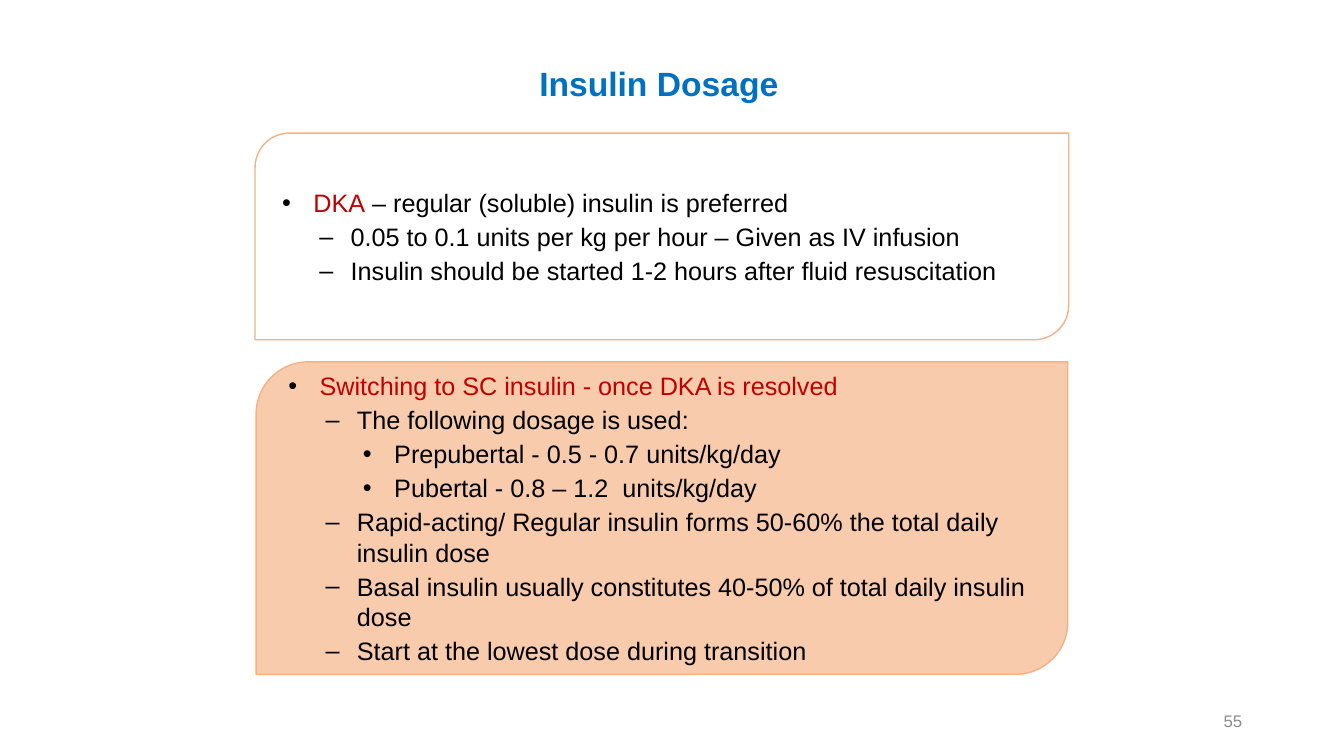
import pptx
import pptx.dml.color
import pptx.enum.shapes
import pptx.enum.text
import pptx.oxml.ns
import pptx.util
from lxml import etree

SCALE = 9144  # EMU per px, 100 px to the inch
FONT = "Arial"
BLACK, RED, BLUE, GREY = "000000", "C00000", "0070C0", "8C8C8C"
WHITE, PEACH, ORANGE = "FFFFFF", "F8CBAD", "F4B183"
ALIGN = pptx.enum.text.PP_ALIGN

# Each item: level, red text, black text
DKA = [
    (0, "DKA", " – regular (soluble) insulin is preferred"),
    (1, "", "0.05 to 0.1 units per kg per hour – Given as IV infusion"),
    (1, "", "Insulin should be started 1-2 hours after fluid resuscitation"),
]
SWITCH = [
    (0, "Switching to SC insulin - once DKA is resolved", ""),
    (1, "", "The following dosage is used:"),
    (2, "", "Prepubertal - 0.5 - 0.7 units/kg/day"),
    (2, "", "Pubertal - 0.8 – 1.2  units/kg/day"),
    (1, "", "Rapid-acting/ Regular insulin forms 50-60% the total daily insulin dose"),
    (1, "", "Basal insulin usually constitutes 40-50% of total daily insulin dose"),
    (1, "", "Start at the lowest dose during transition"),
]


def px(n):
    return pptx.util.Emu(n * SCALE)


def color(code):
    return pptx.dml.color.RGBColor.from_string(code)


def style(run, size, code, bold=False):
    font = run.font
    font.name = FONT
    font.size = pptx.util.Pt(size)
    font.bold = bold
    font.color.rgb = color(code)


def bullet(para, level):
    """Give the paragraph the hanging indent and mark of its level."""
    props = para._p.get_or_add_pPr()
    props.set("marL", str(px(38 + 37 * level)))
    props.set("indent", str(px(-31)))
    qn = pptx.oxml.ns.qn
    tint = etree.SubElement(props, qn("a:buClr"))
    etree.SubElement(tint, qn("a:srgbClr"), val=BLACK)
    etree.SubElement(props, qn("a:buFont"), typeface=FONT)
    etree.SubElement(props, qn("a:buChar"), char="•–•"[level])
    para.level = level


def label(slide, box, text, size, code, align, bold=False):
    frame = slide.shapes.add_textbox(*map(px, box)).text_frame
    frame.word_wrap = True
    frame.vertical_anchor = pptx.enum.text.MSO_ANCHOR.MIDDLE
    frame.text = text
    para = frame.paragraphs[0]
    para.alignment = align
    style(para.runs[0], size, code, bold)


def panel(slide, box, fill, items):
    """Draw a box with two round corners that holds a bullet list."""
    kind = pptx.enum.shapes.MSO_SHAPE.ROUND_2_DIAG_RECTANGLE
    shape = slide.shapes.add_shape(kind, *map(px, box))
    shape.shadow.inherit = False
    shape.fill.solid()
    shape.fill.fore_color.rgb = color(fill)
    shape.line.color.rgb = color(ORANGE)
    shape.line.width = pptx.util.Pt(1)
    frame = shape.text_frame
    frame.word_wrap = True
    frame.vertical_anchor = pptx.enum.text.MSO_ANCHOR.MIDDLE
    frame.text = "\n".join(red + black for _, red, black in items)
    for i, (para, (level, red, black)) in enumerate(zip(frame.paragraphs, items)):
        bullet(para, level)
        para.alignment = ALIGN.LEFT
        if i:
            para.space_before = pptx.util.Pt(2.7)
        run = para.runs[0]
        style(run, 18, RED if red else BLACK)
        if red and black:
            run.text = red
            rest = para.add_run()
            rest.text = black
            style(rest, 18, BLACK)


def main():
    deck = pptx.Presentation()
    deck.slide_width, deck.slide_height = px(1333), px(750)
    slide = deck.slides.add_slide(deck.slide_layouts[6])
    label(slide, (307, 32, 693, 100), "Insulin Dosage", 24, BLUE, ALIGN.CENTER, True)
    panel(slide, (253, 132, 807, 205), WHITE, DKA)
    panel(slide, (254, 359, 805, 310), PEACH, SWITCH)
    label(slide, (942, 695, 300, 40), "55", 12, GREY, ALIGN.RIGHT)
    deck.save("out.pptx")


if __name__ == "__main__":
    main()
